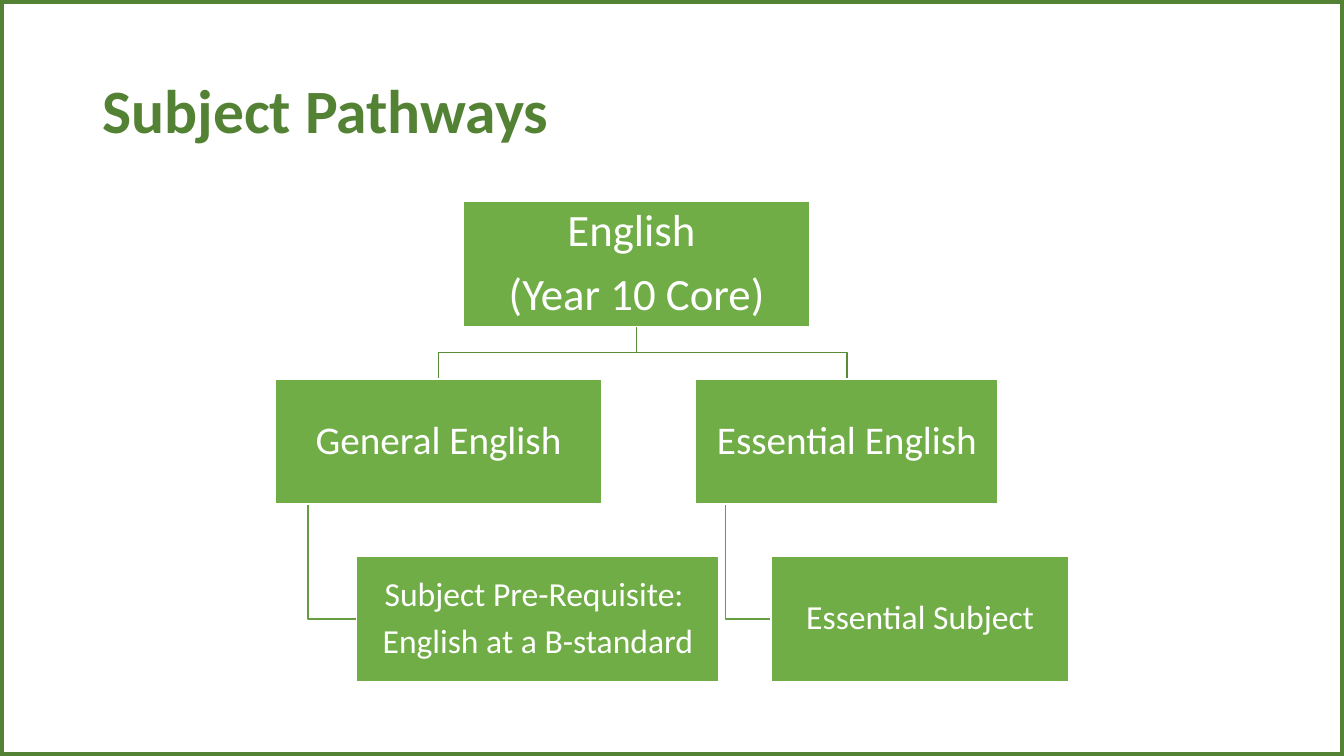
import pptx
import pptx.util
import pptx.dml.color
import pptx.enum.shapes
import pptx.enum.text
import pptx.oxml

Pt = pptx.util.Pt
ALIGN = pptx.enum.text.PP_ALIGN
MIDDLE = pptx.enum.text.MSO_ANCHOR.MIDDLE

HUES = {"dark": "548235", "green": "70AD47", "white": "FFFFFF",
        "trunk": "5A8B39", "twig": "669D40"}
WIDE, HIGH = 960, 540
TOP, STEP, TALL = 144, 126.7, 89.3  # rows of the chart


def hue(name):
    return pptx.dml.color.RGBColor.from_string(HUES[name])


def write(frame, text, size, color="white", bold=False, align=ALIGN.CENTER,
          after=0, inset=None):
    """Fill a text frame, one paragraph per line."""
    frame.text = text
    frame.word_wrap = True
    frame.auto_size = pptx.enum.text.MSO_AUTO_SIZE.NONE
    frame.vertical_anchor = MIDDLE
    if inset is not None:
        frame.margin_left = frame.margin_right = Pt(inset)
        frame.margin_top = frame.margin_bottom = Pt(inset)
    for para in frame.paragraphs:
        para.alignment = align
        para.line_spacing = 0.9
        para.space_after = Pt(after)
        font = para.runs[0].font
        font.name, font.size, font.bold = "Calibri", Pt(size), bold
        font.color.rgb = hue(color)


class Page:
    font = "Calibri"

    def __init__(self, deck):
        self.slide = deck.slides.add_slide(deck.slide_layouts[5])
        self.shapes = self.slide.shapes

    def title(self, text):
        head = self.shapes.title
        head.left, head.top = Pt(66), Pt(28.75)
        head.width, head.height = Pt(828), Pt(104.4)
        write(head.text_frame, text, 44, color="dark", bold=True,
              align=ALIGN.LEFT)

    def border(self, color, width):
        """One empty table cell that frames the slide."""
        table = self.shapes.add_table(1, 1, 0, 0, Pt(WIDE), Pt(HIGH)).table
        table.first_row = table.horz_banding = False
        cell = table.cell(0, 0)
        props = cell._tc.get_or_add_tcPr()
        for side in ("lnL", "lnR", "lnT", "lnB"):
            props.append(pptx.oxml.parse_xml(
                f'<a:{side} xmlns:a="http://schemas.openxmlformats.org/'
                f'drawingml/2006/main" w="{Pt(width)}"><a:solidFill>'
                f'<a:srgbClr val="{HUES[color]}"/></a:solidFill></a:{side}>'))
        cell.fill.background()

    def elbow(self, points, color):
        pen = self.shapes.build_freeform(*map(Pt, points[0]))
        pen.add_line_segments([(Pt(x), Pt(y)) for x, y in points[1:]],
                              close=False)
        line = pen.convert_to_shape()
        line.shadow.inherit = False
        line.fill.background()
        line.line.color.rgb = hue(color)
        line.line.width = Pt(1)

    def box(self, text, left, top, width, size):
        rect = self.shapes.add_shape(
            pptx.enum.shapes.MSO_SHAPE.RECTANGLE,
            Pt(left), Pt(top), Pt(width), Pt(TALL))
        rect.shadow.inherit = False
        rect.fill.solid()
        rect.fill.fore_color.rgb = hue("green")
        rect.line.color.rgb = hue("white")
        rect.line.width = Pt(1)
        write(rect.text_frame, text, size, after=size * 0.33, inset=1.5)


def main():
    deck = pptx.Presentation()
    deck.slide_width, deck.slide_height = Pt(WIDE), Pt(HIGH)
    page = Page(deck)

    # Frame and title
    page.border("dark", 6)
    page.title("Subject Pathways")

    # Boxes: text, row, left, width, parent
    nodes = {
        "core": ("English \n(Year 10 Core)", 0, 331.3, 247, None),
        "general": ("General English", 1, 196.6, 233.3, "core"),
        "basic": ("Essential English", 1, 496.8, 216.2, "core"),
        "prereq": ("Subject Pre-Requisite: \nEnglish at a B-standard",
                   2, 254.9, 258.7, "general"),
        "subject": ("Essential Subject", 2, 550.8, 212.9, "basic"),
    }
    sizes = (32, 28, 24)

    # Links: the first row forks from its centre, the next hangs at a tenth
    for text, row, left, width, parent in nodes.values():
        if parent is None:
            continue
        start, span = nodes[parent][2:4]
        top = TOP + row * STEP
        base = top - STEP + TALL
        if row == 1:
            x, end, mid = start + span / 2, left + width / 2, (base + top) / 2
            page.elbow([(x, base), (x, mid), (end, mid), (end, top)], "trunk")
        else:
            x, mid = start + span / 10, top + TALL / 2
            page.elbow([(x, base), (x, mid), (left, mid)], "twig")

    # Boxes on top of the links
    for text, row, left, width, parent in nodes.values():
        page.box(text, left, TOP + row * STEP, width, sizes[row])

    deck.save("out.pptx")


if __name__ == "__main__":
    main()
